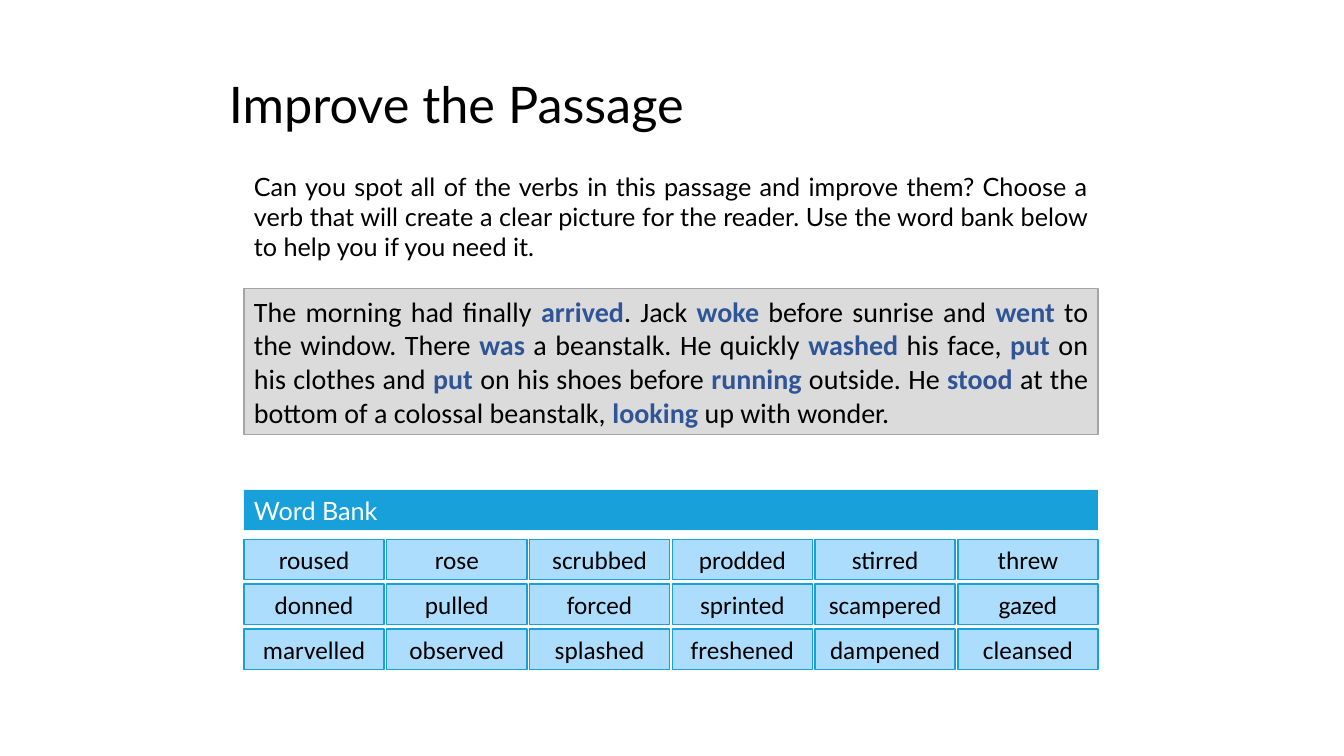
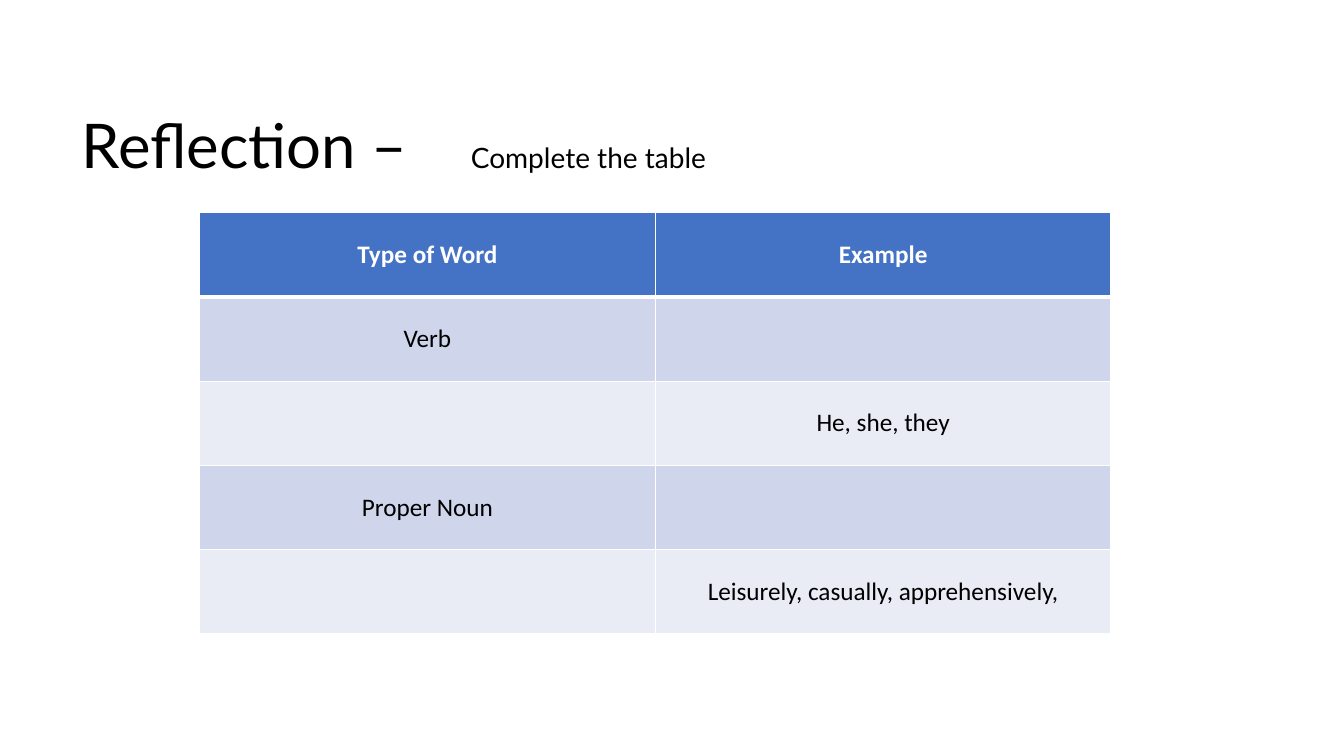
from dataclasses import dataclass
from typing import NamedTuple

from lxml.etree import SubElement as Sub
from pptx import Presentation
from pptx.dml.color import RGBColor
from pptx.enum.shapes import MSO_SHAPE as Shape
from pptx.enum.text import MSO_ANCHOR as Anchor
from pptx.enum.text import MSO_AUTO_SIZE as Fit
from pptx.enum.text import PP_ALIGN as Align
from pptx.oxml.ns import qn
from pptx.util import Inches, Pt

# Shared look
BLACK, WHITE = "000000", "FFFFFF"
SKY, PALE = "18A0DB", "ACDDFC"
GREY, EDGE = "DBDBDB", "A5A5A5"
VERB, HEAD = "2F5597", "4472C4"
BANDS = ("CFD5EA", "E9EBF5")
LATO, BODY = "Lato", "Calibri"
SIDES = ("L", "R", "T", "B")


class Box(NamedTuple):
    left: float
    top: float
    width: float
    height: float


@dataclass
class Bit:
    text: str
    size: int = 18
    font: str = BODY
    color: str = BLACK
    bold: bool = False


@dataclass
class Panel:
    box: Box
    fill: str
    line: str | None
    bits: list[Bit]
    align: Align = Align.JUSTIFY


# Words of the slides
TASK = (
    "Can you spot all of the verbs in this passage and improve them? "
    "Choose a verb that will create a clear picture for the reader. "
    "Use the word bank below to help you if you need it."
)
# Stars enclose each verb
STORY = (
    "The morning had finally *arrived*. Jack *woke* before sunrise and "
    "*went* to the window. There *was* a beanstalk. He quickly *washed* "
    "his face, *put* on his clothes and *put* on his shoes before "
    "*running* outside. He *stood* at the bottom of a colossal beanstalk, "
    "*looking* up with wonder."
)
BANK = (
    ("roused", "rose", "scrubbed", "prodded", "stirred", "threw"),
    ("donned", "pulled", "forced", "sprinted", "scampered", "gazed"),
    ("marvelled", "observed", "splashed", "freshened", "dampened",
     "cleansed"),
)
ROWS = (
    ("Type of Word", "Example"),
    ("Verb", ""),
    ("", "He, she, they"),
    ("Proper Noun", ""),
    ("", "Leisurely, casually, apprehensively,"),
)

# Word grid, in inches
LEFT, WIDE = 2.42, 8.47
TOP, TILE_W, TILE_H, GAP_Y = 5.35, 1.39, 0.4, 0.045
STEP_X = (WIDE - TILE_W) / (len(BANK[0]) - 1)
STEP_Y = TILE_H + GAP_Y


def tint(code: str) -> RGBColor:
    return RGBColor.from_string(code)


def place(box: Box) -> list[int]:
    return [Inches(side) for side in box]


def write(para, bits: list[Bit], align: Align) -> None:
    para.alignment = align
    for bit in bits:
        run = para.add_run()
        run.text = bit.text
        font = run.font
        font.name, font.size, font.bold = bit.font, Pt(bit.size), bit.bold
        font.color.rgb = tint(bit.color)


def add_title(slide, box: Box, bits: list[Bit], tab: float = 0) -> None:
    title = slide.shapes.title
    title.left, title.top, title.width, title.height = place(box)
    frame = title.text_frame
    frame.auto_size = Fit.NONE
    frame.vertical_anchor = Anchor.MIDDLE
    para = frame.paragraphs[0]
    if tab:
        stops = Sub(para._p.get_or_add_pPr(), qn("a:tabLst"))
        Sub(stops, qn("a:tab"), pos=str(Inches(tab)), algn="l")
    para.line_spacing = 0.9
    write(para, bits, Align.LEFT)


def add_text(slide, box: Box, bits: list[Bit]) -> None:
    frame = slide.shapes.add_textbox(*place(box)).text_frame
    frame.word_wrap = True
    write(frame.paragraphs[0], bits, Align.JUSTIFY)


def add_panel(slide, panel: Panel) -> None:
    shape = slide.shapes.add_shape(Shape.RECTANGLE, *place(panel.box))
    shape.shadow.inherit = False
    shape.fill.solid()
    shape.fill.fore_color.rgb = tint(panel.fill)
    if panel.line:
        shape.line.color.rgb = tint(panel.line)
        shape.line.width = Pt(1)
    else:
        shape.line.fill.background()
    write(shape.text_frame.paragraphs[0], panel.bits, panel.align)


def add_edges(cell, row: int) -> None:
    props = cell._tc.get_or_add_tcPr()
    for side in SIDES:
        thick = (row, side) in ((0, "B"), (1, "T"))
        line = Sub(props, qn(f"a:ln{side}"), w=str(Pt(3 if thick else 1)))
        Sub(Sub(line, qn("a:solidFill")), qn("a:srgbClr"), val=WHITE)


def add_grid(slide, box: Box, rows: tuple) -> None:
    table = slide.shapes.add_table(
        len(rows), len(rows[0]), *place(box)).table
    for r, row in enumerate(rows):
        for c, word in enumerate(row):
            cell = table.cell(r, c)
            add_edges(cell, r)
            cell.fill.solid()
            cell.fill.fore_color.rgb = tint(BANDS[(r - 1) % 2] if r else HEAD)
            cell.vertical_anchor = Anchor.MIDDLE
            if word:
                bit = Bit(word, color=BLACK if r else WHITE, bold=r == 0)
                write(cell.text_frame.paragraphs[0], [bit], Align.CENTER)


def draw_bank(slide) -> None:
    for r, row in enumerate(BANK):
        for c, word in enumerate(row):
            box = Box(LEFT + c * STEP_X, TOP + r * STEP_Y, TILE_W, TILE_H)
            add_panel(slide, Panel(box, PALE, SKY, [Bit(word)], Align.CENTER))


def draw_story(slide) -> None:
    add_title(slide, Box(2.17, 0.52, 8.99, 1.09),
              [Bit("Improve the Passage", 36, LATO)])
    add_text(slide, Box(LEFT, 1.65, WIDE, 1.01), [Bit(TASK, font=LATO)])
    draw_bank(slide)
    bits = [
        Bit(part, 20, color=VERB if i % 2 else BLACK, bold=i % 2 == 1)
        for i, part in enumerate(STORY.split("*"))
    ]
    add_panel(slide, Panel(Box(LEFT, 2.86, WIDE, 1.45), GREY, EDGE, bits))
    label = Bit("Word Bank", font=LATO, color=WHITE)
    add_panel(slide, Panel(Box(LEFT, 4.86, WIDE, 0.4), SKY, None, [label]))


def draw_table(slide) -> None:
    add_title(slide, Box(0.71, 1.05, 10.64, 0.85),
              [Bit("Reflection –\t", 44, LATO),
               Bit("Complete the table", 20, LATO)], tab=3.86)
    add_grid(slide, Box(1.98, 2.11, 9.04, 4.18), ROWS)


def main() -> None:
    deck = Presentation()
    deck.slide_width, deck.slide_height = Inches(13.33), Inches(7.5)
    for draw in (draw_story, draw_table):
        draw(deck.slides.add_slide(deck.slide_layouts[5]))
    deck.save("out.pptx")


if __name__ == "__main__":
    main()
